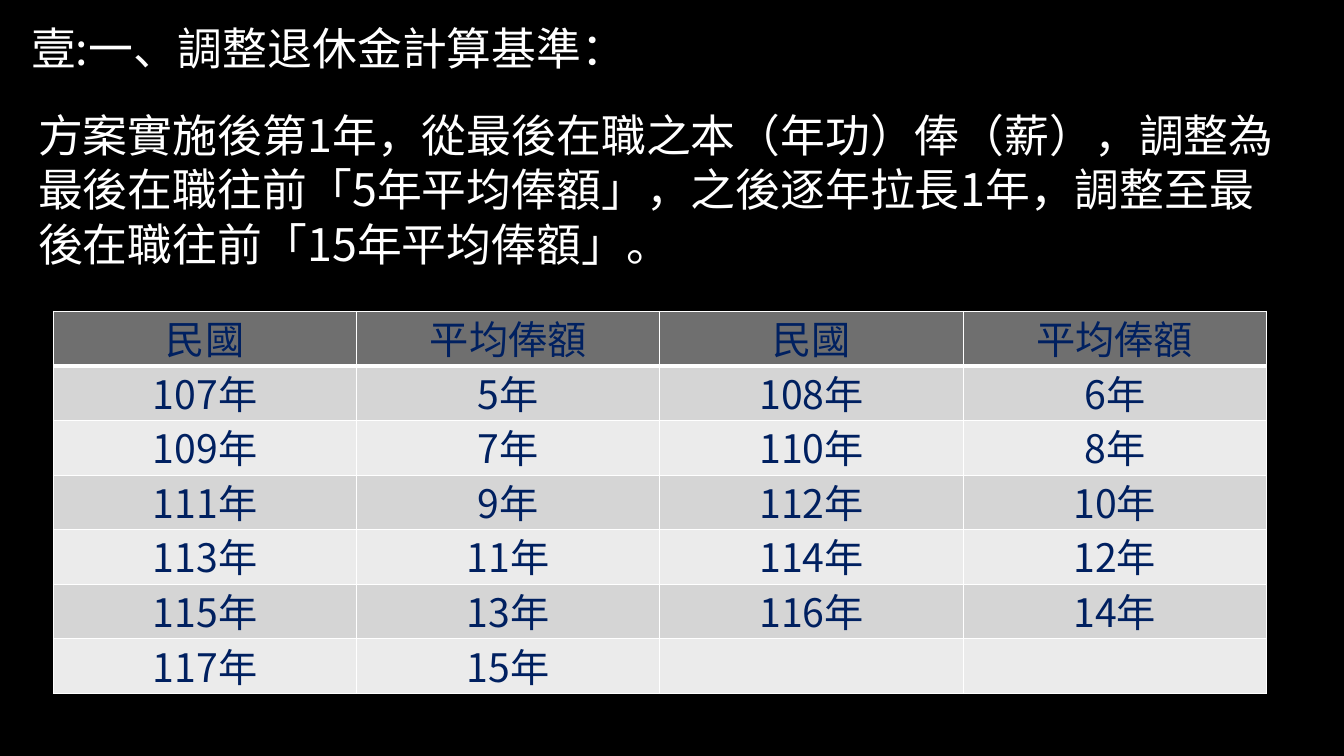
from pptx import Presentation
from pptx.dml.color import RGBColor
from pptx.enum.text import MSO_ANCHOR, PP_ALIGN
from pptx.oxml import parse_xml
from pptx.oxml.ns import nsdecls
from pptx.util import Inches, Pt

FONT = "Noto Sans CJK SC"


def color(value):
    return RGBColor.from_string(value)


def write(frame, text, size, ink, spacing, align=PP_ALIGN.LEFT):
    para = frame.paragraphs[0]
    para.alignment = align
    para.line_spacing = Pt(spacing)
    span = para.add_run()
    span.text = text
    for name, value in {"name": FONT, "size": Pt(size)}.items():
        setattr(span.font, name, value)
    span.font.color.rgb = color(ink)
    # East Asian characters take their typeface from a separate element
    span.font._element.append(
        parse_xml(f'<a:ea {nsdecls("a")} typeface="{FONT}"/>'))


deck = Presentation()
deck.slide_width, deck.slide_height = Inches(13.33), Inches(7.5)
page = deck.slides.add_slide(deck.slide_layouts[6])
page.background.fill.solid()
page.background.fill.fore_color.rgb = color("000000")

# Heading and explanation: left, top, width, height, top inset, text
texts = [
    (0.21, 0.1, 12.74, 1.04, 0.1, "壹:一、調整退休金計算基準："),
    (0.28, 0.69, 12.6, 2.02, 0.38,
     "方案實施後第1年，從最後在職之本（年功）俸（薪），調整為最後在職往前"
     "「5年平均俸額」，之後逐年拉長1年，調整至最後在職往前「15年平均俸額」。"),
]
for left, top, width, height, inset, text in texts:
    box = page.shapes.add_textbox(
        Inches(left), Inches(top), Inches(width), Inches(height))
    box.text_frame.word_wrap = True
    box.text_frame.margin_top = Inches(inset)
    write(box.text_frame, text, 32, "FFFFFF", 38.6)

# Table values: each year from 107 to 117 averages one more year of salary
entries = [(f"{year}年", f"{year - 102}年") for year in range(107, 118)]
entries.append(("", ""))
rows = [("民國", "平均俸額") * 2]
rows += [left + right for left, right in zip(entries[::2], entries[1::2])]

# Table
table = page.shapes.add_table(
    len(rows), 4, Inches(0.53), Inches(3.09), Inches(12.03), Inches(3.79)).table
cell_format = {
    "vertical_anchor": MSO_ANCHOR.MIDDLE,
    "margin_left": Inches(0.01), "margin_right": Inches(0.01),
    "margin_top": Inches(0.01), "margin_bottom": 0,
}
for row, values in enumerate(rows):
    fill = "6F6F6F" if row == 0 else ("EBEBEB", "D5D5D5")[row % 2]
    for column, text in enumerate(values):
        cell = table.cell(row, column)
        for name, value in cell_format.items():
            setattr(cell, name, value)
        if text:
            write(cell.text_frame, text, 28, "002060", 38, PP_ALIGN.CENTER)

        # White borders, heavier between the header and the body
        weights = {"L": 1, "R": 1,
                   "T": 3 if row == 1 else 1, "B": 3 if row == 0 else 1}
        for side, weight in weights.items():
            cell._tc.get_or_add_tcPr().append(parse_xml(
                f'<a:ln{side} {nsdecls("a")} w="{Pt(weight)}"><a:solidFill>'
                f'<a:srgbClr val="FFFFFF"/></a:solidFill></a:ln{side}>'))
        cell.fill.solid()
        cell.fill.fore_color.rgb = color(fill)

deck.save("out.pptx")
